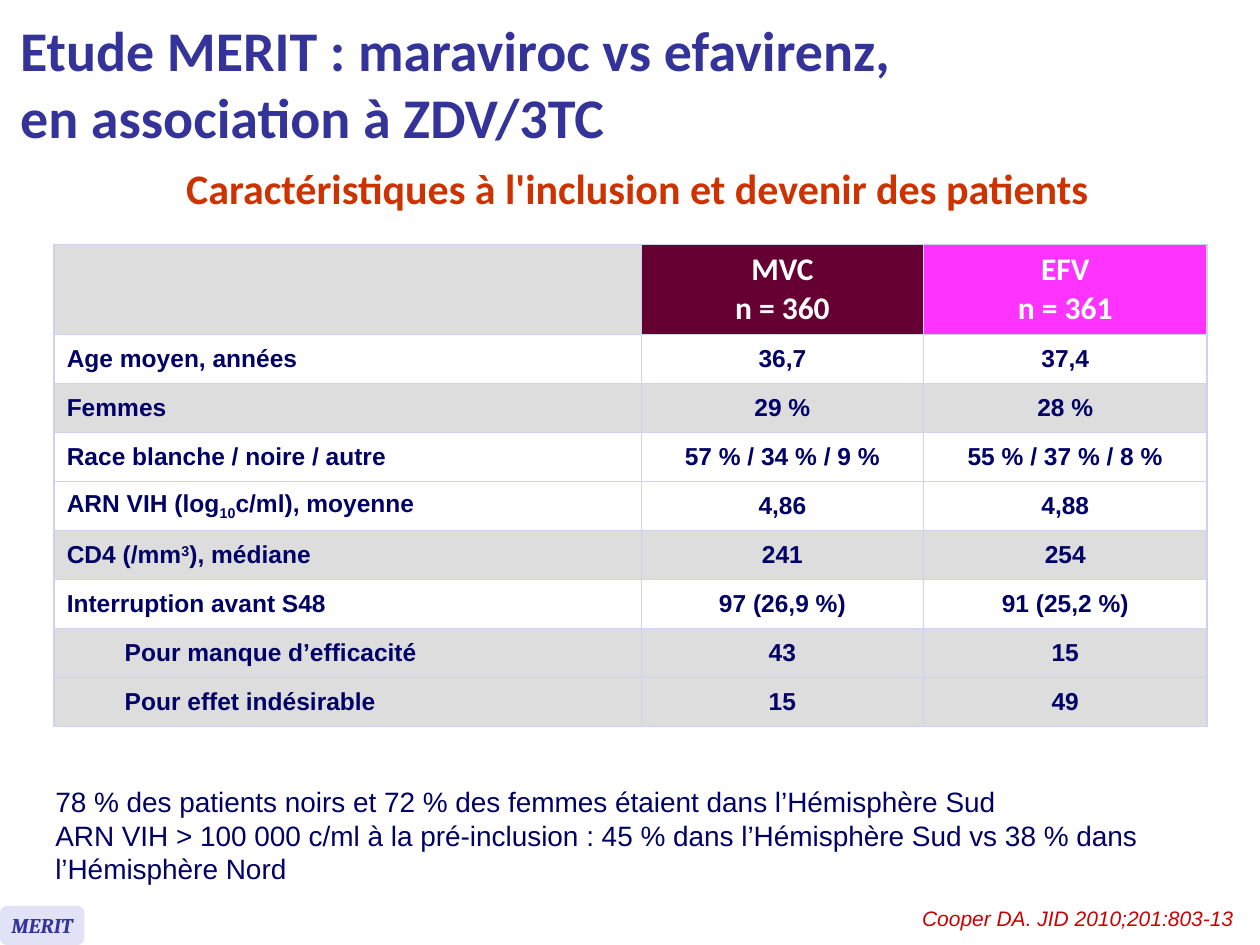
from dataclasses import dataclass
from lxml.etree import SubElement as Sub
from pptx import Presentation
from pptx.dml.color import RGBColor as Rgb
from pptx.enum.shapes import MSO_SHAPE as Kind
from pptx.enum.text import MSO_ANCHOR as Anchor, MSO_AUTO_SIZE as Auto, PP_ALIGN as Align
from pptx.oxml.ns import qn
from pptx.util import Inches, Pt


@dataclass(frozen=True)
class Theme:
    blue: str = "333399"
    navy: str = "000066"
    rust: str = "CC3300"
    red: str = "CC0000"
    wine: str = "660033"
    pink: str = "FF33FF"
    white: str = "FFFFFF"
    grey: str = "DDDDDD"
    pale: str = "E2E2F6"
    rule: str = "D0D0F0"
    head: str = "Calibri"
    body: str = "Arial"
    tag: str = "Cambria"
    title: int = 32
    sub: int = 24
    arm: int = 18
    note: int = 16
    cell: int = 14
    small: int = 12


T = Theme()
WIDE, HIGH = 10, 7.5
COLS = (0.46, 4.2, 2.24, 2.25)
HEAD_ROW, ROW = 0.69, 0.39
ARMS = (("MVC\vn = 360", T.wine), ("EFV\vn = 361", T.pink))
ROWS = (
    ("Age moyen, années", "36,7", "37,4", T.white),
    ("Femmes", "29 %", "28 %", T.grey),
    ("Race blanche / noire / autre", "57 % / 34 % / 9 %", "55 % / 37 % / 8 %", T.white),
    ((("ARN VIH (log", 0), ("10", -25), ("c/ml), moyenne", 0)), "4,86", "4,88", T.white),
    ((("CD4 (/mm", 0), ("3", 30), ("), médiane", 0)), "241", "254", T.grey),
    ("Interruption avant S48", "97 (26,9 %)", "91 (25,2 %)", T.white),
    ("Pour manque d’efficacité", "43", "15", T.grey),
    ("Pour effet indésirable", "15", "49", T.grey),
)
NESTED = 7


def write(para, text, face, size, hue, bold=False, ital=False, align=Align.LEFT):
    if isinstance(text, str):
        para.text = text
    else:
        for part, base in text:
            run = para.add_run()
            run.text = part
            if base:
                run._r.get_or_add_rPr().set("baseline", str(base * 1000))
    para.alignment = align
    font = para.font
    font.name, font.size, font.bold, font.italic = face, Pt(size), bold, ital
    font.color.rgb = Rgb.from_string(hue)


def place(shape, left, top, wide, high):
    shape.left, shape.top = Inches(left), Inches(top)
    shape.width, shape.height = Inches(wide), Inches(high)


def add_text(slide, box, lines, *look, **more):
    frame = slide.shapes.add_textbox(*map(Inches, box)).text_frame
    frame.word_wrap = True
    for i, line in enumerate(lines):
        para = frame.add_paragraph() if i else frame.paragraphs[0]
        write(para, line, *look, **more)
    return frame


def edge(cell, side, width):
    line = Sub(cell._tc.get_or_add_tcPr(), qn(f"a:ln{side}"), w=str(Pt(width)))
    if width:
        Sub(Sub(line, qn("a:solidFill")), qn("a:srgbClr"), val=T.rule)
    else:
        Sub(line, qn("a:noFill"))


def style(cell, row, col, hue):
    inner = row >= NESTED
    edge(cell, "L", 0 if inner and col == 1 else 1)
    edge(cell, "R", 0 if inner and col == 0 else 1)
    edge(cell, "T", 0.5 if row else 1)
    edge(cell, "B", 0.5)
    cell.fill.solid()
    cell.fill.fore_color.rgb = Rgb.from_string(hue)
    cell.vertical_anchor = Anchor.MIDDLE


def add_grid(slide):
    high = HEAD_ROW + ROW * len(ROWS)
    box = map(Inches, (0.43, 1.94, sum(COLS), high))
    table = slide.shapes.add_table(len(ROWS) + 1, len(COLS), *box).table
    table.first_row = table.horz_banding = False
    for col, wide in zip(table.columns, COLS):
        col.width = Inches(wide)
    for i, row in enumerate(table.rows):
        row.height = Inches(ROW if i else HEAD_ROW)
        hues = [ROWS[i - 1][3]] * 4 if i else [T.grey] * 2 + [hue for _, hue in ARMS]
        for j, hue in enumerate(hues):
            style(table.cell(i, j), i, j, hue)
        if i < NESTED:
            table.cell(i, 0).merge(table.cell(i, 1))
    for j, (arm, _) in enumerate(ARMS, 2):
        write(table.cell(0, j).text_frame.paragraphs[0], arm,
              T.head, T.arm, T.white, bold=True, align=Align.CENTER)
    for i, (label, *values, _) in enumerate(ROWS, 1):
        lead = ("", label) if i >= NESTED else (label, "")
        for j, text in enumerate((*lead, *values)):
            write(table.cell(i, j).text_frame.paragraphs[0], text, T.body, T.cell,
                  T.navy, bold=True, align=Align.CENTER if j > 1 else Align.LEFT)


def add_title(slide):
    title = slide.shapes.title
    place(title, 0.06, 0.05, 8.96, 1.21)
    frame = title.text_frame
    frame.auto_size, frame.vertical_anchor = Auto.NONE, Anchor.MIDDLE
    write(frame.paragraphs[0], "Etude MERIT : maraviroc vs efavirenz,\ven association à ZDV/3TC",
          T.head, T.title, T.blue, bold=True)


def add_tag(slide):
    high = 0.31
    box = map(Inches, (0, HIGH - high, 0.67, high))
    tag = slide.shapes.add_shape(Kind.ROUNDED_RECTANGLE, *box)
    tag.shadow.inherit = False
    tag.fill.solid()
    tag.fill.fore_color.rgb = Rgb.from_string(T.pale)
    tag.line.fill.background()
    frame = tag.text_frame
    frame.word_wrap, frame.vertical_anchor = False, Anchor.MIDDLE
    write(frame.paragraphs[0], "MERIT", T.tag, T.small, T.blue,
          bold=True, ital=True, align=Align.CENTER)


def main():
    deck = Presentation()
    deck.slide_width, deck.slide_height = Inches(WIDE), Inches(HIGH)
    slide = deck.slides.add_slide(deck.slide_layouts[5])
    add_title(slide)
    add_grid(slide)
    sub = add_text(slide, (0.71, 1.43, 8.7, 0.31),
                   ["Caractéristiques à l'inclusion et devenir des patients"],
                   T.head, T.sub, T.rust, bold=True, align=Align.CENTER)
    sub.paragraphs[0].line_spacing = Pt(15.2)
    add_text(slide, (0.34, 6.18, 9.15, 0.9),
             ["78 % des patients noirs et 72 % des femmes étaient dans l’Hémisphère Sud",
              "ARN VIH > 100 000 c/ml à la pré-inclusion : 45 % dans l’Hémisphère Sud "
              "vs 38 % dans l’Hémisphère Nord"],
             T.body, T.note, T.navy)
    add_tag(slide)
    add_text(slide, (6.39, 7.14, 3.5, 0.3), ["Cooper DA. JID 2010;201:803-13"],
             T.body, T.small, T.red, ital=True, align=Align.RIGHT)
    deck.save("out.pptx")


if __name__ == "__main__":
    main()
